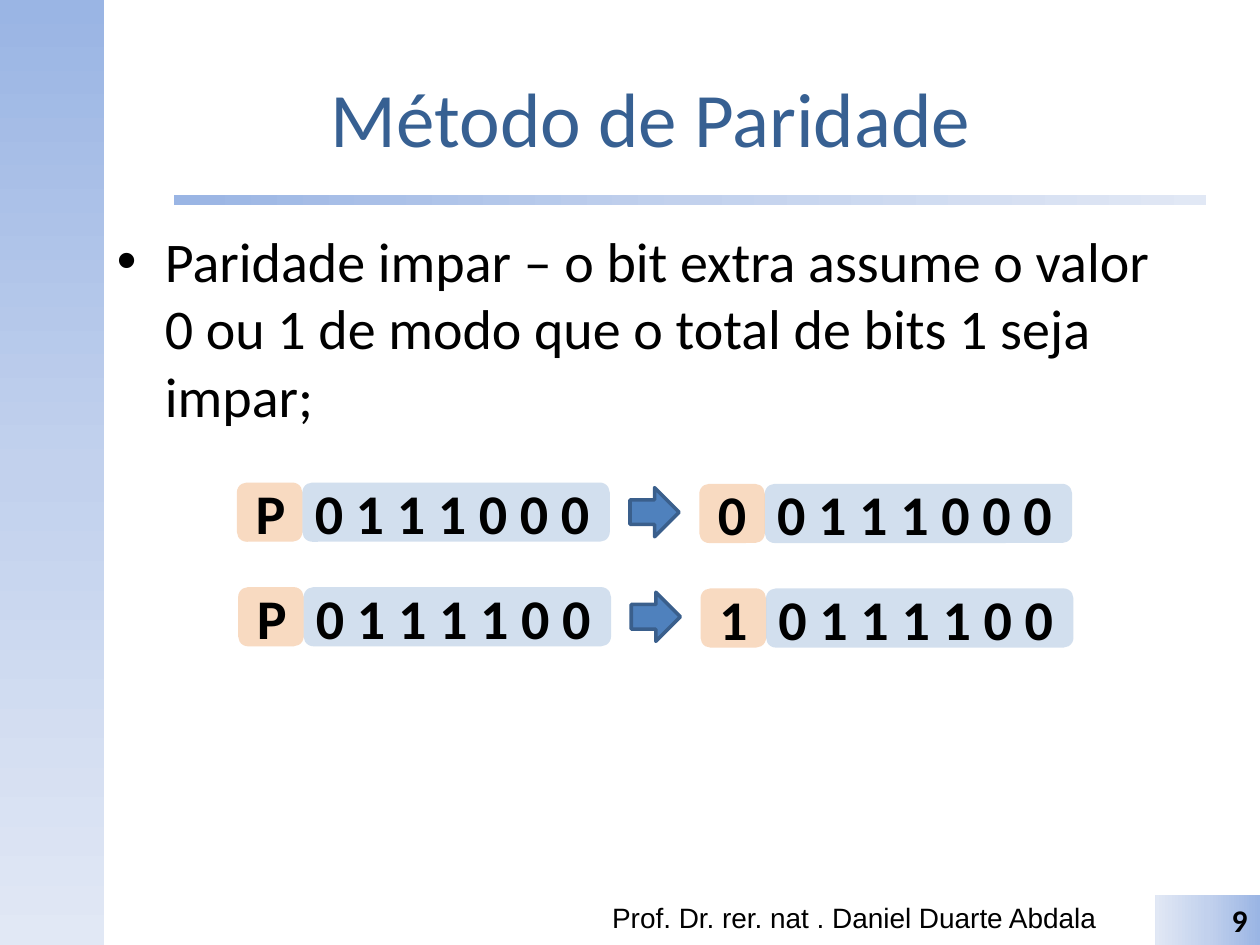
import pptx
import pptx.util
import pptx.dml.color
import pptx.enum.shapes
import pptx.enum.text
import pptx.oxml.ns
import lxml.etree

Inches = pptx.util.Inches
SHAPE = pptx.enum.shapes.MSO_SHAPE
ALIGN = pptx.enum.text.PP_ALIGN
qn = pptx.oxml.ns.qn


def add_shape(shapes, kind, box, color=None, alpha=None, angle=None):
    """Add a borderless shape, solid (optionally transparent) or with the blue gradient."""
    shape = shapes.add_shape(kind, *[Inches(value) for value in box])
    shape.shadow.inherit = False
    shape.line.fill.background()
    if angle is None:
        shape.fill.solid()
        shape.fill.fore_color.rgb = pptx.dml.color.RGBColor.from_string(color)
        if alpha is not None:
            color_element = shape.fill._xPr.find(qn("a:solidFill"))[0]
            lxml.etree.SubElement(color_element, qn("a:alpha"), val=str(alpha * 1000))
    else:
        shape.fill.gradient()
        gradient = shape.fill._xPr.find(qn("a:gradFill"))
        stops = gradient.find(qn("a:gsLst"))
        for stop in list(stops):
            stops.remove(stop)
        for position, stop_color in ((0, "9AB5E4"), (50, "C2D1ED"), (100, "E1E8F5")):
            stop = lxml.etree.SubElement(stops, qn("a:gs"), pos=str(position * 1000))
            lxml.etree.SubElement(stop, qn("a:srgbClr"), val=stop_color)
        gradient.find(qn("a:lin")).set("ang", str(angle * 60000))
    return shape


def add_text(shapes, box, text, size, font="Calibri", color="000000", bold=False, align=ALIGN.LEFT):
    """Add a wrapped text box holding one run."""
    shape = shapes.add_textbox(*[Inches(value) for value in box])
    shape.text_frame.word_wrap = True
    paragraph = shape.text_frame.paragraphs[0]
    paragraph.alignment = align
    run = paragraph.add_run()
    run.text = text
    run.font.size = pptx.util.Pt(size)
    run.font.name = font
    run.font.bold = bold
    run.font.color.rgb = pptx.dml.color.RGBColor.from_string(color)
    return shape


presentation = pptx.Presentation()
presentation.slide_width = Inches(10)
presentation.slide_height = Inches(7.5)
slide = presentation.slides.add_slide(presentation.slide_layouts[6])

# Side band and title rule
add_shape(slide.shapes, SHAPE.RECTANGLE, (0, 0, 0.83, 7.5), angle=90)
rule = add_shape(slide.shapes, SHAPE.ROUNDED_RECTANGLE, (1.38, 1.55, 8.19, 0.08), angle=0)
rule.adjustments[0] = 0

# Title
title = add_text(slide.shapes, (0.83, 0.3, 8.67, 1.25), "Método de Paridade", 44,
                 color="376092", align=ALIGN.CENTER)
title.text_frame.vertical_anchor = pptx.enum.text.MSO_ANCHOR.MIDDLE

# Bulleted definition
body = add_text(slide.shapes, (0.83, 1.75, 8.67, 4.95),
                "Paridade impar – o bit extra assume o valor 0 ou 1 de modo que "
                "o total de bits 1 seja impar;", 32)
properties = body.text_frame.paragraphs[0]._p.get_or_add_pPr()
properties.set("marL", str(Inches(0.38)))
properties.set("indent", str(Inches(-0.38)))
lxml.etree.SubElement(properties, qn("a:buFont"), typeface="Arial")
lxml.etree.SubElement(properties, qn("a:buChar"), char="•")

# Footer and slide number
add_text(slide.shapes, (4.76, 7.1, 4.19, 0.4), "Prof. Dr. rer. nat . Daniel Duarte Abdala",
         16, font="Arial")
number_box = (9.17, 7.1, 0.83, 0.4)
add_shape(slide.shapes, SHAPE.RECTANGLE, number_box, angle=180)
add_text(slide.shapes, number_box, "9", 18, bold=True, align=ALIGN.RIGHT)

# Parity examples: word with open parity bit, arrow, word with its parity bit
examples = [("0 1 1 1 0 0 0", "0", 1.88, 3.83), ("0 1 1 1 1 0 0", "1", 1.89, 4.66)]
for data_bits, parity_bit, left, top in examples:
    for parity, word_left, word_top in (("P", left, top), (parity_bit, left + 3.67, top + 0.01)):
        group = slide.shapes.add_group_shape()
        data_left = word_left + 0.52
        add_shape(group.shapes, SHAPE.ROUNDED_RECTANGLE, (data_left, word_top, 2.44, 0.47),
                  "4F81BD", alpha=25)
        add_text(group.shapes, (data_left, word_top - 0.08, 2.44, 0.64), data_bits, 32, bold=True)
        add_shape(group.shapes, SHAPE.ROUNDED_RECTANGLE, (word_left, word_top, 0.52, 0.47),
                  "E46C0A", alpha=25)
        add_text(group.shapes, (word_left + 0.05, word_top - 0.08, 0.47, 0.64), parity, 32, bold=True)
    arrow = add_shape(slide.shapes, SHAPE.RIGHT_ARROW, (left + 3.12, top + 0.04, 0.39, 0.39), "4F81BD")
    arrow.line.color.rgb = pptx.dml.color.RGBColor.from_string("3A5F8C")
    arrow.line.width = pptx.util.Pt(2)

presentation.save("out.pptx")
